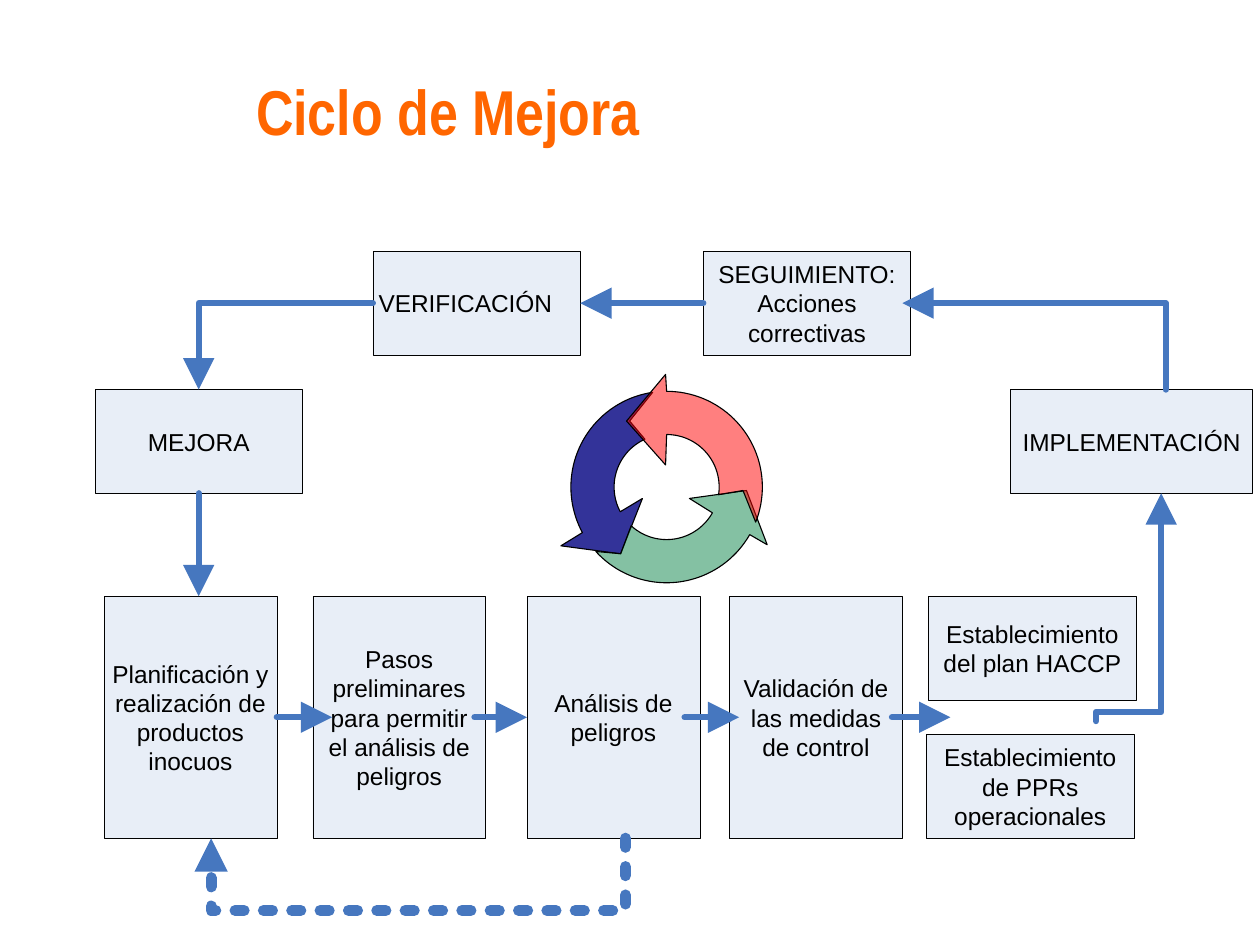
from dataclasses import dataclass
from math import cos, radians, sin

from lxml.etree import SubElement
from pptx import Presentation
from pptx.dml.color import RGBColor as Color
from pptx.enum.shapes import MSO_CONNECTOR as Connector, MSO_SHAPE as Shape
from pptx.enum.text import MSO_ANCHOR as Anchor, PP_ALIGN as Align
from pptx.oxml.ns import qn
from pptx.util import Inches, Pt

TOP, LEFT, BOTTOM, RIGHT = range(4)


@dataclass(frozen=True)
class Theme:
    title: str = "FF6600"
    ink: str = "000000"
    box: str = "E8EEF7"
    arrow: str = "4677BF"
    blue: str = "333399"
    green: str = "339966"
    red: str = "FF0000"
    title_font: str = "Arial Narrow"
    body_font: str = "Arial"
    title_size: float = 57
    body_size: float = 22
    body_leading: float = 26.3
    outline: float = 0.38
    ring_outline: float = 1
    arrow_width: float = 5.63
    dash_width: float = 10


class CycleSlide:
    cell = 0.432
    ring_center = (19.29, 14.09)
    outer_radius = 2.77
    inner_radius = 1.52

    def __init__(self, page, theme):
        self.shapes = page.shapes
        self.theme = theme

    def grid(self, *lengths):
        return [Inches(length * self.cell) for length in lengths]

    def paint(self, fill, color):
        fill.solid()
        fill.fore_color.rgb = Color.from_string(color)

    def set_words(self, paragraph, words, font, size, color, bold=False):
        paragraph.text = words
        paragraph.font.name = font
        paragraph.font.size = Pt(size)
        paragraph.font.bold = bold
        paragraph.font.color.rgb = Color.from_string(color)

    def title(self, words, left, top, width, height):
        frame = self.shapes.add_textbox(*self.grid(left, top, width, height)).text_frame
        frame.word_wrap = True
        frame.vertical_anchor = Anchor.MIDDLE
        frame.margin_left = frame.margin_right = Inches(0.16)
        frame.margin_top, frame.margin_bottom = Inches(0.19), Inches(0.08)
        theme = self.theme
        self.set_words(frame.paragraphs[0], words, theme.title_font, theme.title_size, theme.title, True)

    def box(self, words, left, top, width=6, height=3, right_inset=0):
        theme = self.theme
        box = self.shapes.add_shape(Shape.RECTANGLE, *self.grid(left, top, width, height))
        box.shadow.inherit = False
        self.paint(box.fill, theme.box)
        self.paint(box.line.fill, theme.ink)
        box.line.width = Pt(theme.outline)
        frame = box.text_frame
        frame.word_wrap = False
        frame.vertical_anchor = Anchor.MIDDLE
        frame.margin_left = frame.margin_top = frame.margin_bottom = 0
        frame.margin_right = self.grid(right_inset)[0]
        para = frame.paragraphs[0]
        self.set_words(para, words, theme.body_font, theme.body_size, theme.ink)
        para.alignment = Align.CENTER
        para.line_spacing = Pt(theme.body_leading)
        return box

    def style_arrow(self, arrow, width, head, dashed=False):
        self.paint(arrow.line.fill, self.theme.arrow)
        arrow.line.width = Pt(width)
        stroke = arrow._element.spPr.find(qn("a:ln"))
        stroke.set("cap", "rnd")
        if dashed:
            pattern = SubElement(stroke, qn("a:custDash"))
            SubElement(pattern, qn("a:ds"), d="180000", sp="75000")
        SubElement(stroke, qn("a:round"))
        SubElement(stroke, qn("a:tailEnd"), type="triangle", w=head, len=head)

    def straight_arrow(self, start, end, source=None, target=None):
        arrow = self.shapes.add_connector(Connector.STRAIGHT, *self.grid(*start, *end))
        if source:
            arrow.begin_connect(*source)
        if target:
            arrow.end_connect(*target)
        self.style_arrow(arrow, self.theme.arrow_width, "lg")
        SubElement(arrow._element.spPr, qn("a:effectLst"))

    def outline(self, points, close):
        start, *rest = [self.grid(*point) for point in points]
        builder = self.shapes.build_freeform(*start)
        builder.add_line_segments(rest, close=close)
        outline = builder.convert_to_shape()
        outline.shadow.inherit = False
        return outline

    def bent_arrow(self, *points, dashed=False):
        arrow = self.outline(points, False)
        arrow.fill.background()
        theme = self.theme
        if dashed:
            self.style_arrow(arrow, theme.dash_width, "med", True)
        else:
            self.style_arrow(arrow, theme.arrow_width, "lg")

    def arc(self, radius, start, end, steps=40):
        x, y = self.ring_center
        angles = [radians(start + (end - start) * step / steps) for step in range(steps + 1)]
        return [(x + radius * cos(angle), y + radius * sin(angle)) for angle in angles]

    def ring_arrow(self, color, opacity, outer, head, inner, notch):
        points = [*self.arc(self.outer_radius, *outer), *head, *self.arc(self.inner_radius, *inner), notch]
        arrow = self.outline(points, True)
        self.paint(arrow.fill, color)
        if opacity < 100:
            shade = arrow._element.spPr.find(qn("a:solidFill"))[0]
            SubElement(shade, qn("a:alpha"), val=str(opacity * 1000))
        self.paint(arrow.line.fill, self.theme.ink)
        arrow.line.width = Pt(self.theme.ring_outline)


def main():
    deck = Presentation()
    deck.slide_width, deck.slide_height = Inches(15.75), Inches(11.81)
    theme = Theme()
    cycle = CycleSlide(deck.slides.add_slide(deck.slide_layouts[6]), theme)
    cycle.title("Ciclo de Mejora", 7.04, 1.62, 12.92, 2.87)

    review_row, middle_row, step_row, lower_row = 7.27, 11.27, 17.25, 21.25
    verification = cycle.box("VERIFICACIÓN", 10.79, review_row, right_inset=0.65)
    follow_up = cycle.box("SEGUIMIENTO:\vAcciones\vcorrectivas", 20.35, review_row)
    improvement = cycle.box("MEJORA", 2.75, middle_row)
    cycle.box("IMPLEMENTACIÓN", 29.24, middle_row, width=7)
    steps = [
        cycle.box(words, left, step_row, width=5, height=7)
        for words, left in (
            ("Planificación y\vrealización de\vproductos\vinocuos", 3.01),
            ("Pasos\vpreliminares\vpara permitir\vel análisis de\vpeligros", 9.05),
            ("Análisis de\vpeligros", 15.25),
            ("Validación de\vlas medidas\vde control", 21.11),
        )
    ]
    cycle.box("Establecimiento\vdel plan HACCP", 26.87, step_row)
    cycle.box("Establecimiento\vde PPRs\voperacionales", 26.81, lower_row)

    cycle.ring_arrow(theme.blue, 100, (261.6, 151.6),
                     [(16.23, 15.79), (17.96, 16.02), (18.59, 14.42)], (152, 245.6), (18.22, 12.18))
    cycle.ring_arrow(theme.green, 60, (137.7, 29.8),
                     [(22.2, 15.76), (21.6, 14.19), (19.95, 14.42)], (29.4, 132.5), (17.96, 16.02))
    cycle.ring_arrow(theme.red, 50, (21.5, -90),
                     [(19.26, 10.83), (18.13, 12.18), (19.26, 13.45)], (-90, 8.4), (21.5, 14.19))

    review_line, step_line = review_row + 1.5, step_row + 3.5
    cycle.bent_arrow((10.79, review_line), (5.75, review_line), (5.75, middle_row))
    cycle.straight_arrow((20.35, review_line), (16.79, review_line), (follow_up, LEFT), (verification, RIGHT))
    cycle.bent_arrow((33.73, middle_row), (33.73, review_line), (26.11, review_line))
    cycle.straight_arrow((5.75, middle_row + 3), (5.75, step_row), (improvement, BOTTOM))
    cycle.bent_arrow((18.1, 24.25), (18.1, 26.34), (6.11, 26.34), (6.11, 24.25), dashed=True)
    cycle.straight_arrow((8.01, step_line), (9.61, step_line), source=(steps[0], RIGHT))
    cycle.straight_arrow((13.73, step_line), (15.25, step_line), target=(steps[2], LEFT))
    cycle.straight_arrow((19.81, step_line), (21.39, step_line))
    cycle.straight_arrow((25.81, step_line), (27.5, step_line))
    cycle.bent_arrow((31.71, 20.86), (31.71, 20.6), (33.6, 20.6), (33.6, middle_row + 3))
    deck.save("out.pptx")


if __name__ == "__main__":
    main()
